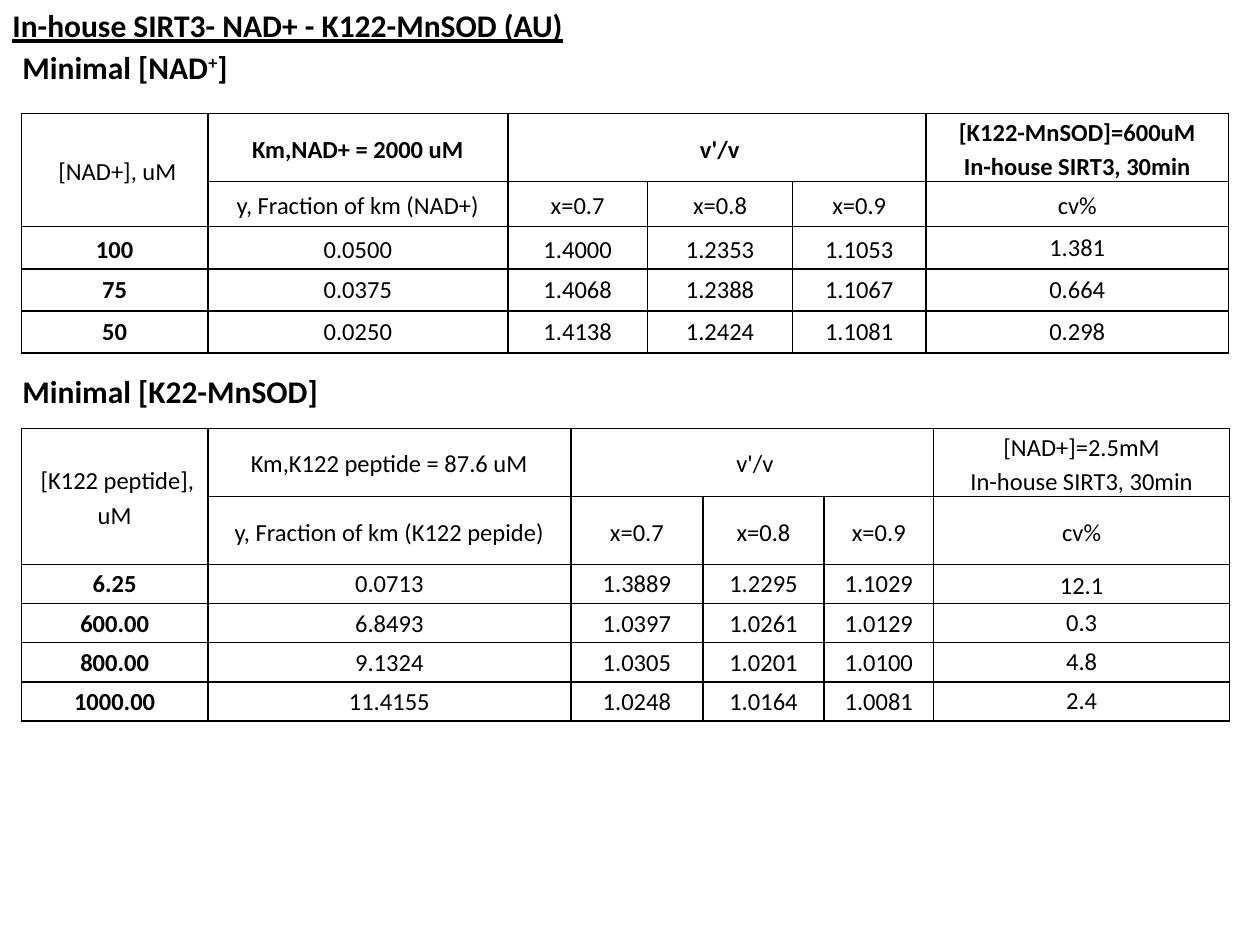
import dataclasses
import itertools

import pptx
import pptx.dml.color
import pptx.enum.text
import pptx.oxml
import pptx.oxml.ns
import pptx.util


@dataclasses.dataclass(frozen=True)
class Theme:
    font: str = "Calibri"
    ink: str = "000000"
    head: int = 18
    body: int = 14
    rule: int = 1
    lead: float = 1.15


@dataclasses.dataclass(frozen=True)
class Title:
    left: float  # all lengths in percent of the slide's width or height
    top: float
    width: float
    words: tuple[str, ...]  # every second piece is raised
    under: bool = False


@dataclasses.dataclass(frozen=True)
class Grid:
    top: float
    cols: tuple[float, ...]
    rows: tuple[float, ...]
    cells: tuple[tuple[str, ...], ...]
    pad: float  # side inset of the loosely set cells, inches
    tail: tuple[float, float]  # insets of the last column, inches
    loose: frozenset[tuple[int, int]]  # body cells set like the head
    strong: bool  # bold first row


LOOK = Theme()
WIDE, HIGH = pptx.util.Inches(10), pptx.util.Inches(7.5)
LEFT, BOX = 1.7, 5.33
HEADS = 2

TITLES = (
    Title(0.8, 4.4, 19, ("Minimal [NAD", "+", "]")),
    Title(0.8, 38.67, 26.3, ("Minimal [K22-MnSOD]",)),
    Title(0, 0, 45.9, ("In-house SIRT3- NAD+ - K122-MnSOD (AU)",), True),
)

STEPS = ("x=0.7", "x=0.8", "x=0.9", "cv%")

GRIDS = (
    Grid(
        12, (14.8, 23.8, 11.1, 11.5, 10.6, 24), (7.2, 4.8) + (4.43,) * 3,
        (
            (" [NAD+], uM", "Km,NAD+ = 2000 uM", " v'/v", "", "",
             "[K122-MnSOD]=600uM\nIn-house SIRT3, 30min"),
            ("", "y, Fraction of km (NAD+)") + STEPS,
            ("100", "0.0500", "1.4000", "1.2353", "1.1053", "1.381"),
            ("75", "0.0375", "1.4068", "1.2388", "1.1067", "0.664"),
            ("50", "0.0250", "1.4138", "1.2424", "1.1081", "0.298"),
        ),
        0.07, (0.1, 0.05), frozenset((2, col) for col in range(5)), True,
    ),
    Grid(
        45.33, (14.8, 28.8, 10.5, 9.6, 8.7, 23.5), (7.2, 7.2) + (4.15,) * 4,
        (
            (" [K122 peptide], uM", "Km,K122 peptide = 87.6 uM", " v'/v", "", "",
             "[NAD+]=2.5mM\nIn-house SIRT3, 30min"),
            ("", "y, Fraction of km (K122 pepide)") + STEPS,
            ("6.25", "0.0713", "1.3889", "1.2295", "1.1029", "12.1"),
            ("600.00", "6.8493", "1.0397", "1.0261", "1.0129", "0.3"),
            ("800.00", "9.1324", "1.0305", "1.0201", "1.0100", "4.8"),
            ("1000.00", "11.4155", "1.0248", "1.0164", "1.0081", "2.4"),
        ),
        0.06, (0, 0), frozenset({(2, 5)}), False,
    ),
)


def across(share: float) -> int:
    return round(WIDE * share / 100)


def down(share: float) -> int:
    return round(HIGH * share / 100)


def style(run, size: int, bold: bool) -> None:
    run.font.name = LOOK.font
    run.font.size = pptx.util.Pt(size)
    run.font.bold = bold
    run.font.color.rgb = pptx.dml.color.RGBColor.from_string(LOOK.ink)


def draw_title(slide, title: Title) -> None:
    box = slide.shapes.add_textbox(
        across(title.left), down(title.top), across(title.width), down(BOX))
    frame = box.text_frame
    frame.word_wrap = False
    frame.auto_size = pptx.enum.text.MSO_AUTO_SIZE.SHAPE_TO_FIT_TEXT
    for spot, word in enumerate(title.words):
        run = frame.paragraphs[0].add_run()
        run.text = word
        style(run, LOOK.head, True)
        if title.under:
            run.font.underline = True
        if spot % 2:
            run._r.get_or_add_rPr().set("baseline", "30000")


def edge(cell) -> None:
    """Rule all four sides of a cell without a fill."""
    cell.fill.background()
    props = cell._tc.get_or_add_tcPr()
    for spot, side in enumerate("LRTB"):
        props.insert(spot, pptx.oxml.parse_xml(
            f'<a:ln{side} {pptx.oxml.ns.nsdecls("a")} w="{pptx.util.Pt(LOOK.rule)}">'
            f'<a:solidFill><a:srgbClr val="{LOOK.ink}"/></a:solidFill></a:ln{side}>'))


def fill_cell(cell, grid: Grid, row: int, col: int) -> None:
    loose = row < HEADS or (row, col) in grid.loose
    if loose:
        side, top, base = grid.pad, 0, 0
    elif col == len(grid.cols) - 1:
        side, top = grid.tail
        base = top
    else:
        side, top, base = 0.01, 0.01, 0
    cell.margin_left = cell.margin_right = pptx.util.Inches(side)
    cell.margin_top = pptx.util.Inches(top)
    cell.margin_bottom = pptx.util.Inches(base)
    cell.vertical_anchor = pptx.enum.text.MSO_ANCHOR.MIDDLE
    edge(cell)

    cell.text_frame.text = grid.cells[row][col]
    bold = col == 0 and row >= HEADS or grid.strong and row == 0 and col > 0
    for para in cell.text_frame.paragraphs:
        para.alignment = pptx.enum.text.PP_ALIGN.CENTER
        if loose:
            para.line_spacing = LOOK.lead
        for run in para.runs:
            style(run, LOOK.body, bold)


def draw_grid(slide, grid: Grid) -> None:
    table = slide.shapes.add_table(
        len(grid.rows), len(grid.cols), across(LEFT), down(grid.top),
        across(sum(grid.cols)), down(sum(grid.rows))).table
    table.first_row = table.horz_banding = False
    for col, share in zip(table.columns, grid.cols):
        col.width = across(share)
    for row, share in zip(table.rows, grid.rows):
        row.height = down(share)
    for row, col in itertools.product(range(len(grid.rows)), range(len(grid.cols))):
        fill_cell(table.cell(row, col), grid, row, col)
    # Label spans both head rows; the ratio spans its three steps
    table.cell(0, 0).merge(table.cell(1, 0))
    table.cell(0, 2).merge(table.cell(0, 4))


def main() -> None:
    deck = pptx.Presentation()
    deck.slide_width, deck.slide_height = WIDE, HIGH
    slide = deck.slides.add_slide(deck.slide_layouts[6])

    # Headings
    for title in TITLES:
        draw_title(slide, title)

    # Result tables
    for grid in GRIDS:
        draw_grid(slide, grid)

    deck.save("out.pptx")


if __name__ == "__main__":
    main()
